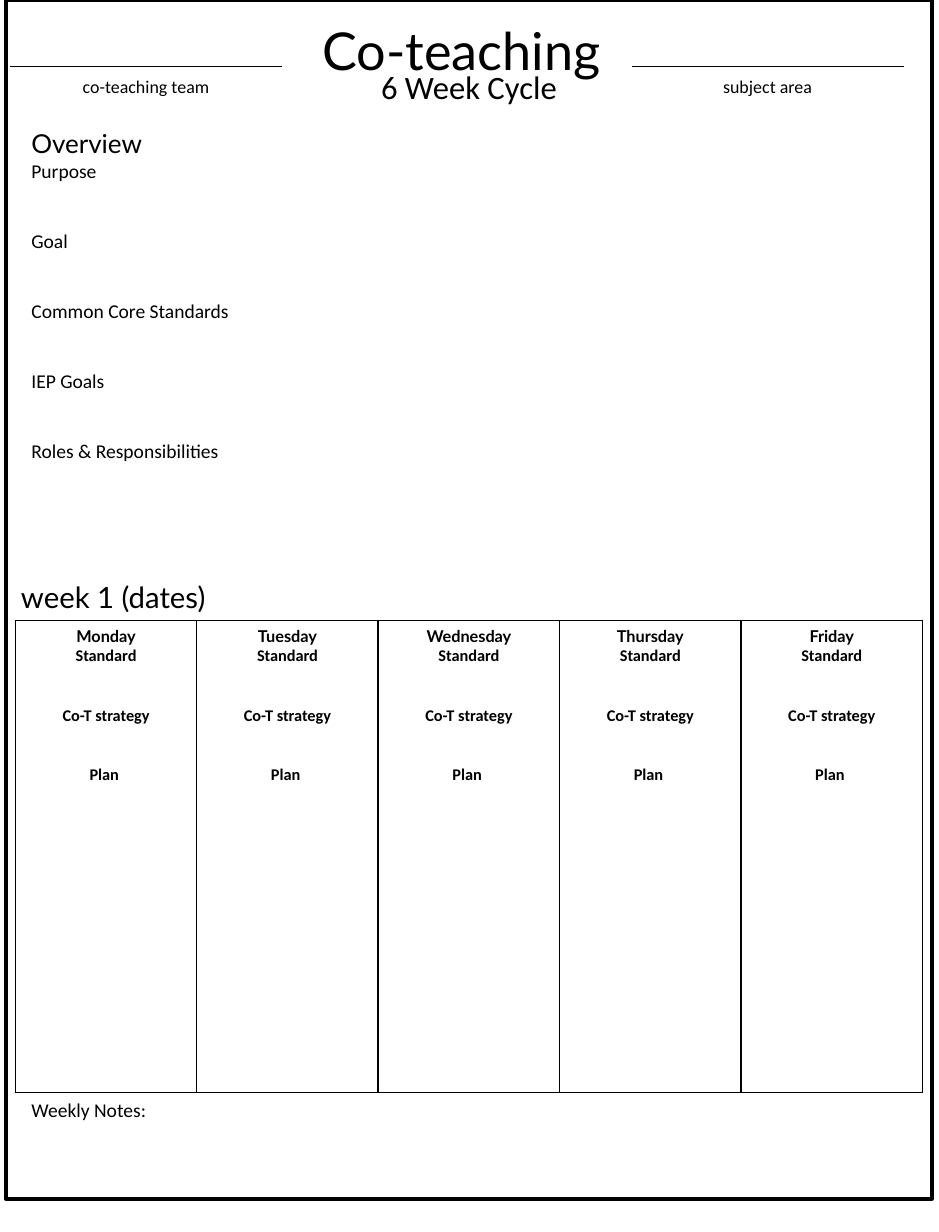
from lxml.etree import SubElement
from pptx import Presentation
from pptx.dml.color import RGBColor
from pptx.enum.shapes import MSO_CONNECTOR, MSO_SHAPE
from pptx.enum.text import MSO_ANCHOR, MSO_AUTO_SIZE, PP_ALIGN
from pptx.oxml.ns import qn
from pptx.util import Pt

BLACK = RGBColor(0, 0, 0)
WHITE = RGBColor(255, 255, 255)
HEADING_FONT = "Lato"
BODY_FONT = "Calibri"
DAYS = ["Monday", "Tuesday", "Wednesday", "Thursday", "Friday"]
DAY_SECTIONS = ["Standard", "Co-T strategy", "Plan "]
OVERVIEW_SECTIONS = ["Purpose", "Goal", "Common Core Standards", "IEP Goals",
                     "Roles & Responsibilities"]


def format_paragraph(paragraph, size, font, align=PP_ALIGN.LEFT, bold=False, gap=0):
    paragraph.alignment = align
    paragraph.space_before = Pt(gap)
    for run in paragraph.runs:
        run.font.size = Pt(size)
        run.font.name = font
        run.font.bold = bold
        run.font.color.rgb = BLACK


def fill_outline(text_frame, heading, heading_size, sections, size, gap,
                 align=PP_ALIGN.LEFT, bold=False):
    text_frame.text = "\n".join([heading] + sections)
    for index, paragraph in enumerate(text_frame.paragraphs):
        if index == 0:
            format_paragraph(paragraph, heading_size, HEADING_FONT, align, bold)
        else:
            format_paragraph(paragraph, size, BODY_FONT, align, bold,
                             gap if index > 1 else 0)


def add_label(slide, text, left, top, width, height, size, font=BODY_FONT,
              align=PP_ALIGN.LEFT):
    label = slide.shapes.add_textbox(Pt(left), Pt(top), Pt(width), Pt(height))
    label.text_frame.word_wrap = True
    label.text_frame.text = text
    format_paragraph(label.text_frame.paragraphs[0], size, font, align)
    return label


def add_frame(slide):
    frame = slide.shapes.add_shape(MSO_SHAPE.RECTANGLE, Pt(3.6), Pt(0), Pt(568), Pt(735.8))
    frame.shadow.inherit = False
    frame.fill.solid()
    frame.fill.fore_color.rgb = WHITE
    frame.line.color.rgb = BLACK
    frame.line.width = Pt(2.25)
    slide.shapes.title.element.addprevious(frame.element)


def set_title(slide):
    title = slide.shapes.title
    title.left, title.top, title.width, title.height = Pt(144), Pt(7.9), Pt(278.6), Pt(46)
    text_frame = title.text_frame
    text_frame.text = "Co-teaching"
    text_frame.vertical_anchor = MSO_ANCHOR.TOP
    text_frame.auto_size = MSO_AUTO_SIZE.NONE
    format_paragraph(text_frame.paragraphs[0], 32, HEADING_FONT, PP_ALIGN.CENTER)


def add_blank(slide, caption, left):
    width, top = 166.8, 41
    line = slide.shapes.add_connector(MSO_CONNECTOR.STRAIGHT, Pt(left), Pt(top),
                                      Pt(left + width), Pt(top))
    line.line.color.rgb = BLACK
    line.line.width = Pt(0.5)
    SubElement(line.element.spPr, qn("a:effectLst"))
    add_label(slide, caption, left, top + 2, width, 21, 11, align=PP_ALIGN.CENTER)


def add_overview(slide):
    overview = add_label(slide, "", 12.2, 74.9, 556.6, 216, 12)
    fill_outline(overview.text_frame, "Overview", 16, OVERVIEW_SECTIONS, 12, 28.5)


def set_borders(cell):
    properties = cell._tc.get_or_add_tcPr()
    for index, side in enumerate(("lnL", "lnR", "lnT", "lnB")):
        border = properties.makeelement(qn(f"a:{side}"), {"w": str(Pt(1))})
        fill = SubElement(border, qn("a:solidFill"))
        SubElement(fill, qn("a:srgbClr"), {"val": str(BLACK)})
        properties.insert(index, border)


def add_week_table(slide):
    graphic = slide.shapes.add_table(1, len(DAYS), Pt(9.4), Pt(380.9), Pt(556.5), Pt(289.4))
    table = graphic.table
    table.first_row = False
    table.horz_banding = False
    for column, day in enumerate(DAYS):
        table.columns[column].width = Pt(111.3)
        cell = table.cell(0, column)
        cell.fill.background()
        set_borders(cell)
        fill_outline(cell.text_frame, day, 10, DAY_SECTIONS, 10, 24.4,
                     PP_ALIGN.CENTER, True)


def main():
    presentation = Presentation()
    presentation.slide_width = Pt(576)
    presentation.slide_height = Pt(756)
    slide = presentation.slides.add_slide(presentation.slide_layouts[5])
    add_frame(slide)
    set_title(slide)
    add_label(slide, "6 Week Cycle", 218.2, 37.4, 139, 32.4, 20, align=PP_ALIGN.CENTER)
    add_blank(slide, "co-teaching team", 6.2)
    add_blank(slide, "subject area", 387.5)
    add_overview(slide)
    add_week_table(slide)
    add_label(slide, "week 1 (dates)", 5.8, 352.1, 556.6, 58.3, 18, HEADING_FONT)
    add_label(slide, "Weekly Notes:", 12.2, 670.3, 98, 21.6, 12)
    presentation.save("out.pptx")


if __name__ == "__main__":
    main()
